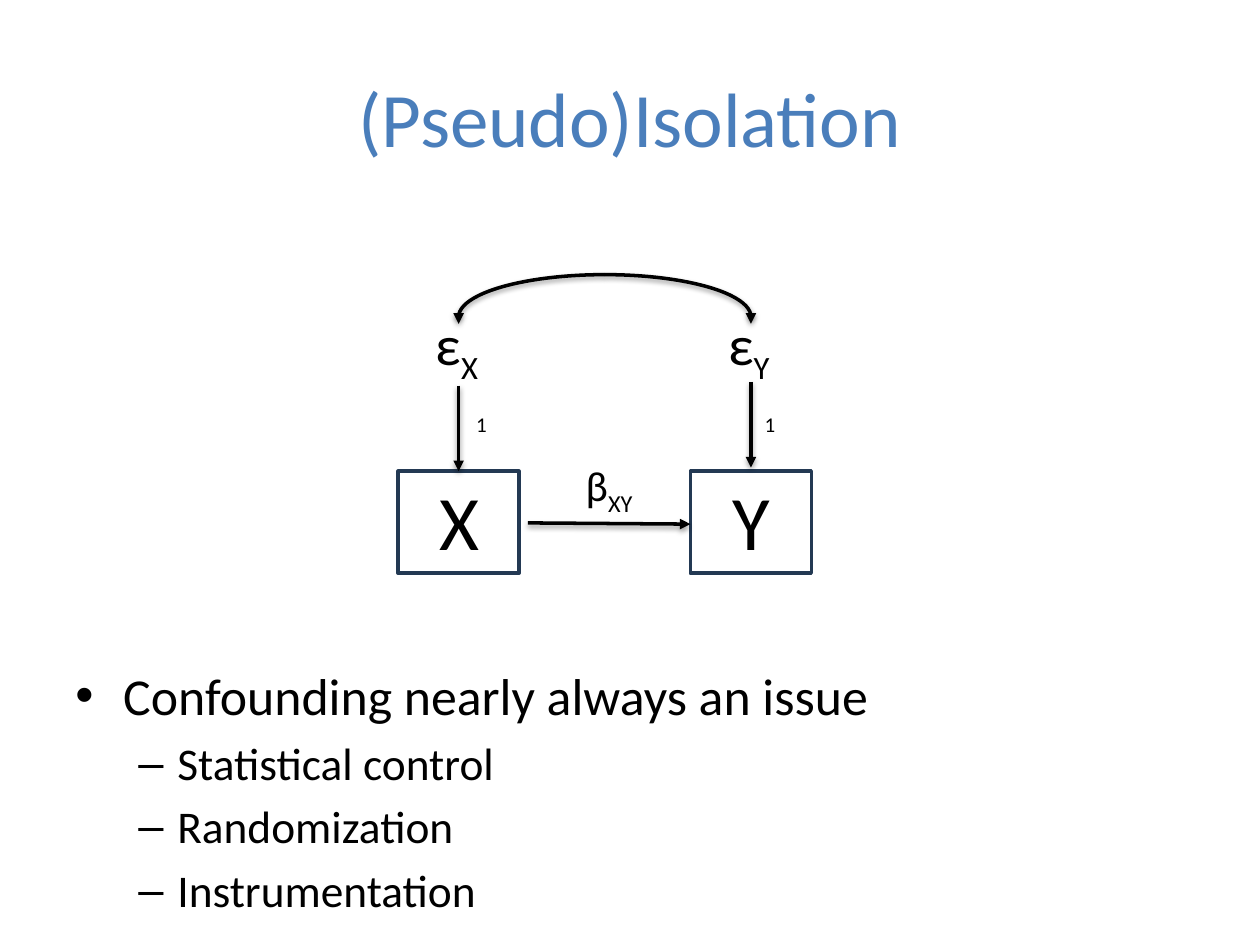
from lxml.etree import SubElement
from pptx import Presentation
from pptx.dml.color import RGBColor
from pptx.enum.shapes import MSO_CONNECTOR, MSO_SHAPE
from pptx.enum.text import MSO_ANCHOR, PP_ALIGN
from pptx.oxml.ns import qn
from pptx.util import Inches, Pt

COLORS = {"title": "4A7EBB", "ink": "000000", "box": "233953"}
FONT = "Calibri"

TITLE = "(Pseudo)Isolation"
BULLETS = [
    (0, "Confounding nearly always an issue"),
    (1, "Statistical control"),
    (1, "Randomization"),
    (1, "Instrumentation"),
]
# per level: bullet sign, size in points, left indent, hanging indent
LEVELS = [("•", 29.6, 0.38, 0.38), ("–", 25.9, 0.81, 0.31)]
# variable, centre x, top of the error arrow, left of the error weight
VARIABLES = [("X", 3.64, 3.06, 3.68), ("Y", 5.96, 3.03, 5.97)]
PATH_LABEL = ("β", "XY")
ERROR_WEIGHT = "1"

BOX_TOP, BOX_WIDTH, BOX_HEIGHT = 3.74, 0.96, 0.81
ARROW_LENGTH = 0.68
ARC_TOP, ARC_HEIGHT, ARC_END = 2.18, 0.67, 2.57

presentation = Presentation()
presentation.slide_width, presentation.slide_height = Inches(10), Inches(7.5)
slide = presentation.slides.add_slide(presentation.slide_layouts[6])


def rgb(name):
    return RGBColor.from_string(COLORS[name])


def style(paragraph, size, color="ink"):
    paragraph.font.name = FONT
    paragraph.font.size = Pt(size)
    paragraph.font.color.rgb = rgb(color)


def add_text(text, left, top, width, height, size, color="ink", subscript="",
             align=PP_ALIGN.LEFT, anchor=MSO_ANCHOR.TOP, wrap=False):
    frame = slide.shapes.add_textbox(
        Inches(left), Inches(top), Inches(width), Inches(height)).text_frame
    frame.word_wrap = wrap
    frame.vertical_anchor = anchor
    paragraph = frame.paragraphs[0]
    paragraph.alignment = align
    style(paragraph, size, color)
    paragraph.add_run().text = text
    if subscript:
        lowered = paragraph.add_run()
        lowered.text = subscript
        lowered.font._element.set("baseline", "-25000")
    return frame


def ink_line(shape):
    """Black 2 pt line with a soft shadow below it."""
    shape.line.color.rgb = rgb("ink")
    shape.line.width = Pt(2)
    effects = SubElement(shape._element.spPr, qn("a:effectLst"))
    shadow = SubElement(effects, qn("a:outerShdw"), blurRad=str(Pt(3.1)),
                        dist=str(Pt(1.6)), dir="5400000", rotWithShape="0")
    black = SubElement(shadow, qn("a:srgbClr"), val=COLORS["ink"])
    SubElement(black, qn("a:alpha"), val="38000")


def add_arrow(x1, y1, x2, y2):
    arrow = slide.shapes.add_connector(
        MSO_CONNECTOR.STRAIGHT, Inches(x1), Inches(y1), Inches(x2), Inches(y2))
    ink_line(arrow)
    SubElement(arrow.line._get_or_add_ln(), qn("a:tailEnd"), type="triangle")


def add_half_arc(left, width, flipped):
    arc = slide.shapes.add_shape(
        MSO_SHAPE.ARC, Inches(left), Inches(ARC_TOP), Inches(width), Inches(ARC_HEIGHT))
    arc.fill.background()
    ink_line(arc)
    if flipped:
        arc._element.spPr.xfrm.set("flipH", "1")


def add_variable(name, center, arrow_top, weight_left):
    box = slide.shapes.add_shape(
        MSO_SHAPE.RECTANGLE, Inches(center - BOX_WIDTH / 2), Inches(BOX_TOP),
        Inches(BOX_WIDTH), Inches(BOX_HEIGHT))
    box.shadow.inherit = False
    box.fill.background()
    box.line.color.rgb = rgb("box")
    box.line.width = Pt(2)
    add_text(name, center - 0.53, 3.71, 1.07, 0.84, 44, align=PP_ALIGN.CENTER, wrap=True)
    add_text("ε", center - 0.28, 2.41, 0.56, 0.64, 32, subscript=name)
    add_text(ERROR_WEIGHT, weight_left, 3.22, 0.29, 0.3, 12)
    add_arrow(center, arrow_top, center, arrow_top + ARROW_LENGTH)
    add_arrow(center, 2.51, center, ARC_END)


def add_bullets():
    frame = slide.shapes.add_textbox(
        Inches(0.5), Inches(5.22), Inches(9), Inches(2.23)).text_frame
    frame.word_wrap = True
    for index, (level, text) in enumerate(BULLETS):
        sign, size, indent, hanging = LEVELS[level]
        paragraph = frame.add_paragraph() if index else frame.paragraphs[0]
        paragraph.text = text
        paragraph.level = level
        paragraph.space_before = Pt(size * 0.2 if index else 0)
        style(paragraph, size)
        properties = paragraph._p.get_or_add_pPr()
        properties.set("marL", str(Inches(indent)))
        properties.set("indent", str(-Inches(hanging)))
        bullet_font = properties.makeelement(qn("a:buFont"), {"typeface": "Arial"})
        bullet = properties.makeelement(qn("a:buChar"), {"char": sign})
        properties.find(qn("a:defRPr")).addprevious(bullet_font)
        bullet_font.addnext(bullet)


add_text(TITLE, 0.5, 0.3, 9, 1.25, 44, "title", align=PP_ALIGN.CENTER,
         anchor=MSO_ANCHOR.MIDDLE, wrap=True)

x_center, y_center = (variable[1] for variable in VARIABLES)
for flipped in (True, False):
    add_half_arc(x_center, y_center - x_center, flipped)
for variable in VARIABLES:
    add_variable(*variable)

add_arrow(4.19, 4.15, y_center - BOX_WIDTH / 2, 4.16)
beta, beta_index = PATH_LABEL
add_text(beta, 4.55, 3.6, 0.61, 0.5, 24, subscript=beta_index)
add_bullets()

presentation.save("out.pptx")
